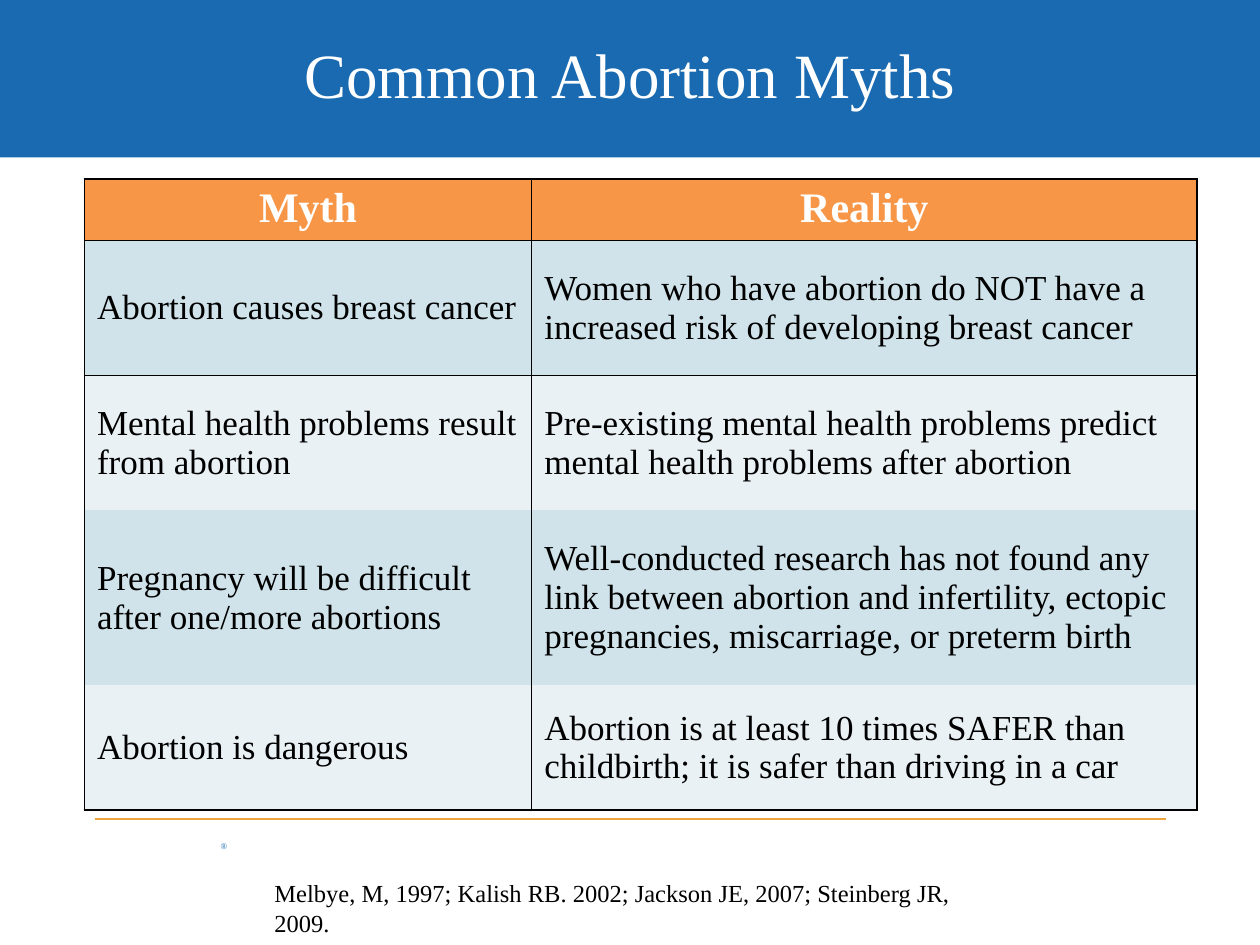
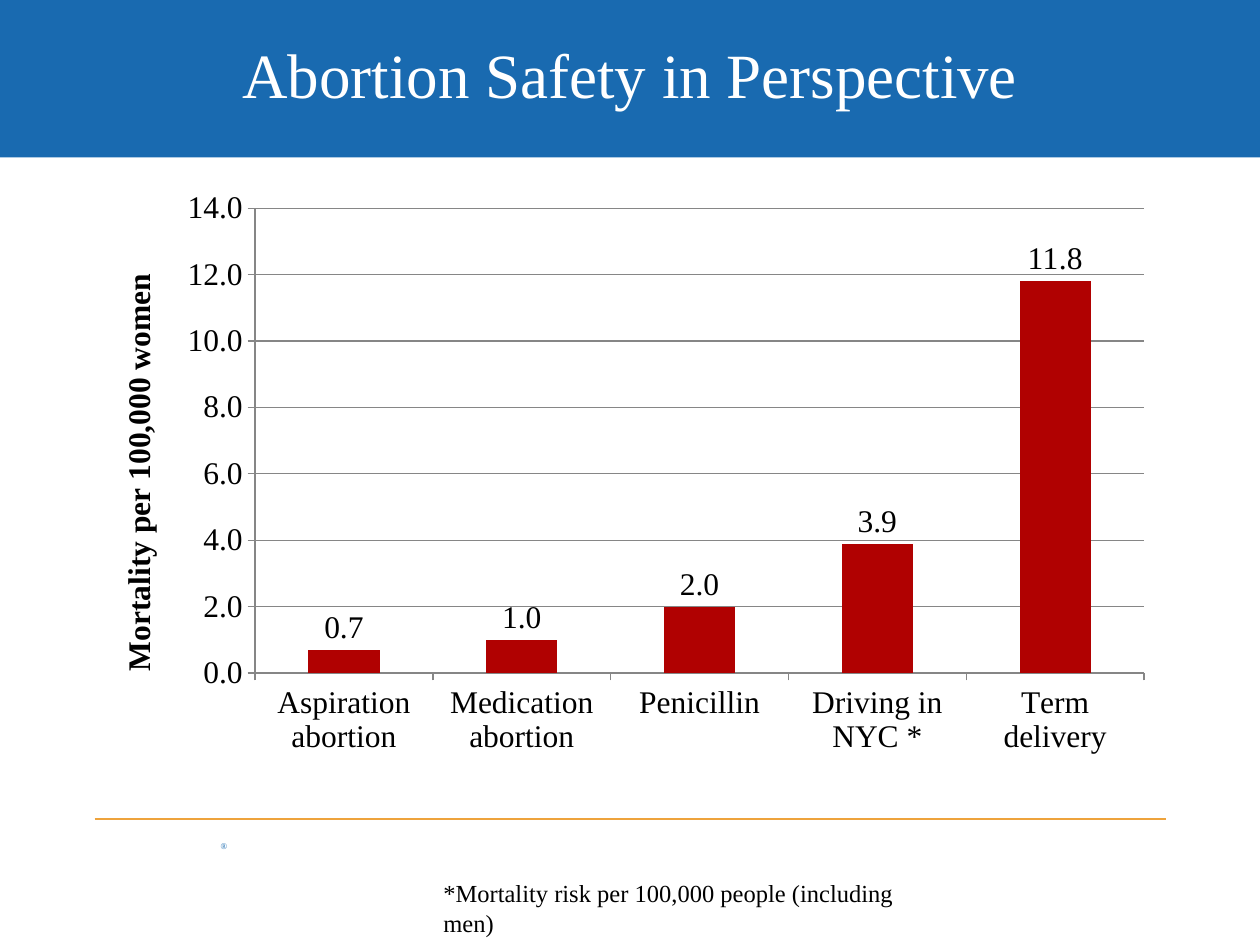
from lxml import etree
from pptx import Presentation
from pptx.chart.data import CategoryChartData
from pptx.dml.color import RGBColor
from pptx.enum.chart import XL_CHART_TYPE, XL_LABEL_POSITION, XL_TICK_MARK
from pptx.enum.shapes import MSO_CONNECTOR, MSO_SHAPE
from pptx.enum.text import MSO_ANCHOR, PP_ALIGN
from pptx.oxml import parse_xml
from pptx.oxml.ns import nsdecls, qn
from pptx.util import Inches, Pt

FONT = "Times New Roman"
BLUE, GOLD, ORANGE, RED = "196AB0", "EEA33C", "F79646", "B00101"
BLACK, WHITE, GRAY = "000000", "FFFFFF", "868686"
BAND_FILLS = ("D0E3EA", "E9F1F5")

COLUMN_WIDTHS = (3.55, 5.28)
ROW_HEIGHTS = (0.49, 1.07, 1.07, 1.39, 0.99)
MYTHS = (
    ("Myth", "Reality"),
    ("Abortion causes breast cancer",
     "Women who have abortion do NOT have a increased risk of developing breast cancer"),
    ("Mental health problems result from abortion",
     "Pre-existing mental health problems predict mental health problems after abortion"),
    ("Pregnancy will be difficult after one/more abortions",
     "Well-conducted research has not found any link between abortion and infertility, "
     "ectopic pregnancies, miscarriage, or preterm birth"),
    ("Abortion is dangerous",
     "Abortion is at least 10 times SAFER than childbirth; it is safer than driving in a car"),
)
MORTALITY = {
    "Aspiration abortion": 0.7,
    "Medication abortion": 1.0,
    "Penicillin": 2.0,
    "Driving in NYC *": 3.9,
    "Term delivery": 11.8,
}


def rgb(hex_color):
    return RGBColor.from_string(hex_color)


def inches(box):
    return [Inches(length) for length in box]


def style_font(font, size, color=BLACK, bold=False):
    font.name, font.size, font.bold = FONT, Pt(size), bold
    font.color.rgb = rgb(color)


def add_text(slide, box, text, size, color=BLACK, margin=None):
    frame = slide.shapes.add_textbox(*inches(box)).text_frame
    frame.word_wrap = True
    if margin is not None:
        frame.margin_left = frame.margin_right = Inches(margin)
        frame.margin_top = frame.margin_bottom = Inches(margin)
    frame.text = text
    style_font(frame.paragraphs[0].runs[0].font, size, color)
    return frame


def add_master_parts(prs, slide):
    """Draw the shared band, mark and footer rule, then move them to the master."""
    band = slide.shapes.add_shape(MSO_SHAPE.RECTANGLE, *inches((0, 0, 10, 1.25)))
    band.shadow.inherit = False
    band.fill.solid()
    band.fill.fore_color.rgb = rgb(BLUE)
    band.line.fill.background()

    add_text(slide, (1.75, 6.67, 0.25, 0.08), "®", 5, BLUE, margin=0)
    mark = slide.shapes[-1]

    rule = slide.shapes.add_connector(MSO_CONNECTOR.STRAIGHT, *inches((0.75, 6.5, 9.25, 6.5)))
    rule.line.color.rgb = rgb(GOLD)
    rule.line.width = Pt(0.75)
    etree.SubElement(rule.element.spPr, qn("a:effectLst"))

    master_tree = prs.slide_master.shapes.element
    for index, part in enumerate((band, mark, rule), start=2):
        master_tree.insert(index, part.element)


def add_title(slide, text):
    title = slide.shapes.title
    title.left, title.top, title.width, title.height = inches((0.5, 0.08, 9, 1))
    frame = title.text_frame
    frame.text = text
    frame.vertical_anchor = MSO_ANCHOR.MIDDLE
    frame.paragraphs[0].alignment = PP_ALIGN.CENTER
    style_font(frame.paragraphs[0].runs[0].font, 36, WHITE)


def set_borders(cell, sides):
    """Rule the given sides (letters of LRTB) in black and clear the others."""
    properties = cell._tc.get_or_add_tcPr()
    for index, side in enumerate("LRTB"):
        paint = (f'<a:solidFill><a:srgbClr val="{BLACK}"/></a:solidFill>'
                 if side in sides else "<a:noFill/>")
        properties.insert(index, parse_xml(
            f'<a:ln{side} {nsdecls("a")} w="{Pt(1)}">{paint}</a:ln{side}>'))


def add_myth_table(slide, box):
    table = slide.shapes.add_table(len(MYTHS), len(COLUMN_WIDTHS), *inches(box)).table
    for column, width in zip(table.columns, COLUMN_WIDTHS):
        column.width = Inches(width)
    row_sides = ("LRTB", "LRTB", "LRT", "LR", "LRB")
    for row_index, (row, texts) in enumerate(zip(table.rows, MYTHS)):
        row.height = Inches(ROW_HEIGHTS[row_index])
        is_header = row_index == 0
        for cell, text in zip(row.cells, texts):
            cell.text = text
            paragraph = cell.text_frame.paragraphs[0]
            cell.fill.solid()
            if is_header:
                cell.fill.fore_color.rgb = rgb(ORANGE)
                paragraph.alignment = PP_ALIGN.CENTER
                style_font(paragraph.runs[0].font, 24, WHITE, bold=True)
            else:
                cell.fill.fore_color.rgb = rgb(BAND_FILLS[(row_index - 1) % 2])
                cell.vertical_anchor = MSO_ANCHOR.MIDDLE
                paragraph.space_after = Pt(6)
                style_font(paragraph.runs[0].font, 20)
            set_borders(cell, row_sides[row_index])


def set_plot_layout(chart, x, y, w, h):
    """Fix the inner plot area, in fractions of the chart."""
    plot_area = chart.element.find(".//" + qn("c:plotArea"))
    for layout in plot_area.findall(qn("c:layout")):
        plot_area.remove(layout)
    plot_area.insert(0, parse_xml(
        f'<c:layout {nsdecls("c")}><c:manualLayout><c:layoutTarget val="inner"/>'
        '<c:xMode val="edge"/><c:yMode val="edge"/>'
        f'<c:x val="{x}"/><c:y val="{y}"/><c:w val="{w}"/><c:h val="{h}"/>'
        "</c:manualLayout></c:layout>"))


def add_mortality_chart(slide, box):
    data = CategoryChartData(number_format="0.0")
    data.categories = list(MORTALITY)
    data.add_series("Series 1", list(MORTALITY.values()))
    chart = slide.shapes.add_chart(XL_CHART_TYPE.COLUMN_CLUSTERED, *inches(box), data).chart
    chart.has_legend = chart.has_title = False
    style_font(chart.font, 18)
    set_plot_layout(chart, 0.15, 0.05, 0.83, 0.79)

    plot = chart.plots[0]
    plot.gap_width = 150
    plot.vary_by_categories = False
    bars = plot.series[0].format.fill
    bars.solid()
    bars.fore_color.rgb = rgb(RED)
    plot.has_data_labels = True
    labels = plot.data_labels
    labels.show_value = True
    labels.number_format, labels.number_format_is_linked = "0.0", False
    labels.position = XL_LABEL_POSITION.OUTSIDE_END
    style_font(labels.font, 18)

    values = chart.value_axis
    values.minimum_scale, values.maximum_scale, values.major_unit = 0, 14, 2
    values.has_major_gridlines = True
    values.tick_labels.number_format = "0.0"
    values.tick_labels.number_format_is_linked = False
    values.axis_title.text_frame.text = "Mortality per 100,000 women"
    style_font(values.axis_title.text_frame.paragraphs[0].runs[0].font, 18, bold=True)
    for axis in (chart.category_axis, values):
        axis.major_tick_mark = XL_TICK_MARK.OUTSIDE
        style_font(axis.tick_labels.font, 18)
    for part in (chart.category_axis, values, values.major_gridlines):
        part.format.line.color.rgb = rgb(GRAY)
        part.format.line.width = Pt(0.75)


def add_myths_slide(slide):
    add_title(slide, "Common Abortion Myths")
    add_myth_table(slide, (0.67, 1.42, sum(COLUMN_WIDTHS), sum(ROW_HEIGHTS)))
    add_text(slide, (2.08, 6.92, 5.93, 0.34),
             "Melbye, M, 1997; Kalish RB. 2002; Jackson JE, 2007; Steinberg JR, 2009.", 14)


def add_safety_slide(slide):
    add_title(slide, "Abortion Safety in Perspective")
    add_mortality_chart(slide, (0.75, 1.42, 8.5, 4.67))
    add_text(slide, (3.42, 6.92, 4.13, 0.34),
             "*Mortality risk per 100,000 people (including men)", 14)


def main():
    prs = Presentation()
    prs.slide_width, prs.slide_height = Inches(10), Inches(7.5)
    title_only = prs.slide_layouts[5]
    myths, safety = (prs.slides.add_slide(title_only) for _ in range(2))
    add_master_parts(prs, myths)
    add_myths_slide(myths)
    add_safety_slide(safety)
    prs.save("out.pptx")


if __name__ == "__main__":
    main()
